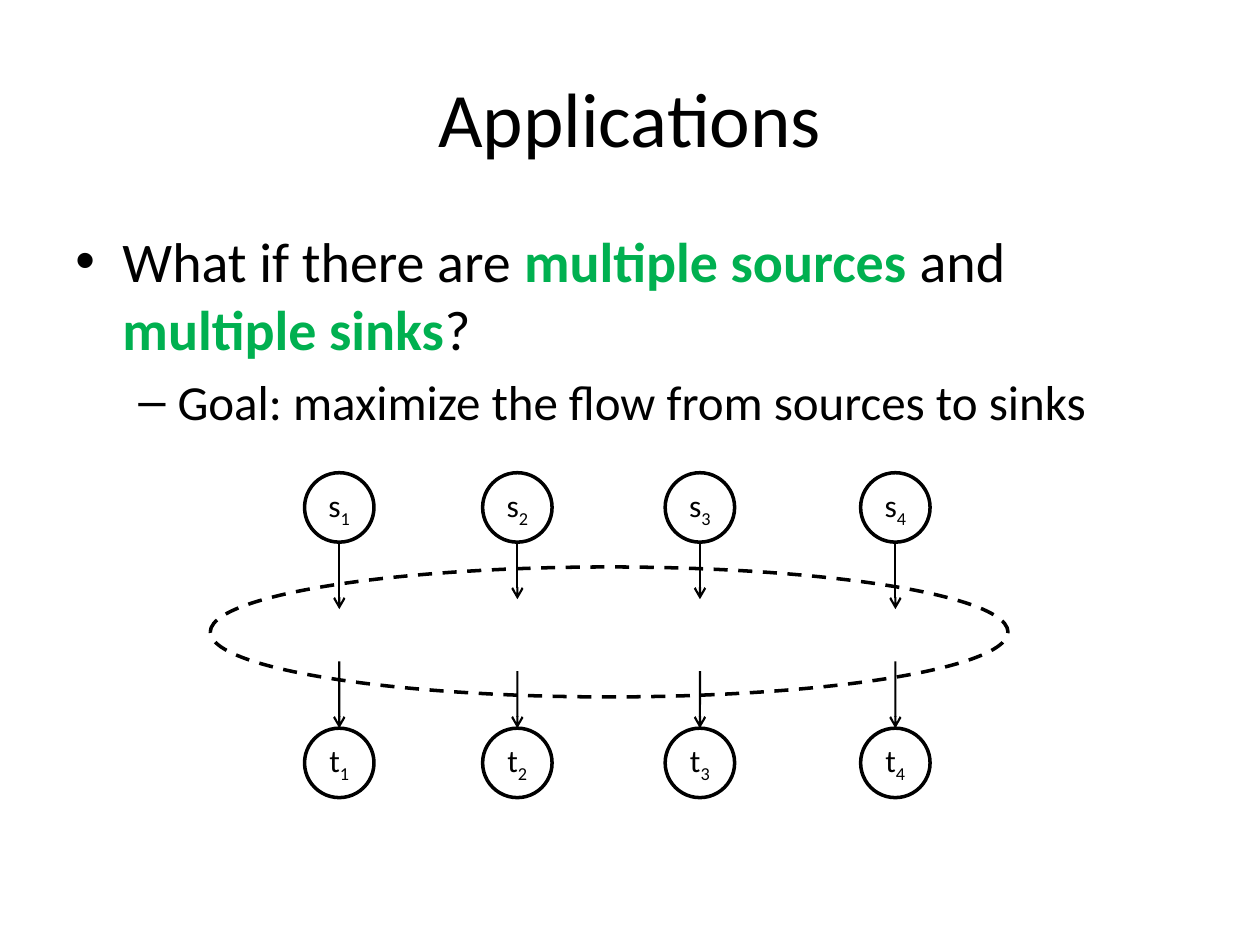
from lxml.etree import SubElement
from pptx import Presentation
from pptx.dml.color import RGBColor
from pptx.enum.dml import MSO_LINE_DASH_STYLE as DASH
from pptx.enum.shapes import MSO_CONNECTOR as CONNECTOR, MSO_SHAPE as SHAPE
from pptx.enum.text import MSO_ANCHOR as ANCHOR, PP_ALIGN as ALIGN
from pptx.oxml.ns import qn
from pptx.util import Cm, Pt

COLORS = {"ink": "000000", "accent": "00B050", "paper": "FFFFFF"}
FONT = "Calibri"

NODE_SIZE = 1.4
SOURCE_TOP, SINK_TOP = 9.53, 14.68
# Column centre and arrow length: the outer arrows reach further into the oval
COLUMNS = [(6.84, 1.35), (10.43, 1.15), (14.11, 1.15), (18.05, 1.35)]


def rgb(name):
    return RGBColor.from_string(COLORS[name])


def write(paragraph, text, size=18, color="ink", bold=False, baseline=None):
    """Append one formatted run to the paragraph."""
    run = paragraph.add_run()
    run.text = text
    font = run.font
    font.name, font.size, font.bold = FONT, Pt(size), bold
    font.color.rgb = rgb(color)
    if baseline is not None:
        run._r.get_or_add_rPr().set("baseline", str(baseline * 1000))


def set_bullet(paragraph, mark, left, hanging, space_before):
    paragraph.space_before = Pt(space_before)
    properties = paragraph._p.get_or_add_pPr()
    properties.set("marL", str(Cm(left)))
    properties.set("indent", str(-Cm(hanging)))
    SubElement(properties, qn("a:buFont")).set("typeface", "Arial")
    SubElement(properties, qn("a:buChar")).set("char", mark)


def add_title(slide, text):
    title = slide.shapes.title
    title.left, title.top = Cm(1.27), Cm(0.76)
    title.width, title.height = Cm(22.86), Cm(3.18)
    title.text_frame.vertical_anchor = ANCHOR.MIDDLE
    paragraph = title.text_frame.paragraphs[0]
    paragraph.alignment = ALIGN.CENTER
    write(paragraph, text, size=44)


def add_body(slide):
    body = slide.shapes.add_textbox(Cm(1.27), Cm(4.45), Cm(22.86), Cm(12.57))
    frame = body.text_frame
    frame.word_wrap = True

    question = frame.paragraphs[0]
    set_bullet(question, "•", left=0.95, hanging=0.95, space_before=6.4)
    write(question, "What if there are ", size=32)
    write(question, "multiple sources ", size=32, color="accent", bold=True)
    write(question, "and ", size=32)
    write(question, "multiple sinks", size=32, color="accent", bold=True)
    write(question, "?", size=32)

    goal = frame.add_paragraph()
    goal.level = 1
    set_bullet(goal, "–", left=2.06, hanging=0.79, space_before=5.6)
    write(goal, "Goal: maximize the flow from sources to sinks", size=28)


def add_ellipse(slide, left, top, width, height):
    ellipse = slide.shapes.add_shape(
        SHAPE.OVAL, Cm(left), Cm(top), Cm(width), Cm(height))
    ellipse.shadow.inherit = False
    ellipse.fill.background()
    ellipse.line.color.rgb = rgb("ink")
    ellipse.line.width = Pt(2)
    return ellipse


def add_node(slide, center, top, letter, number):
    node = add_ellipse(slide, center - NODE_SIZE / 2, top, NODE_SIZE, NODE_SIZE)
    frame = node.text_frame
    frame.margin_left = frame.margin_right = 0
    frame.margin_top = frame.margin_bottom = 0
    frame.vertical_anchor = ANCHOR.MIDDLE
    label = frame.paragraphs[0]
    label.alignment = ALIGN.CENTER
    write(label, letter)
    write(label, str(number), baseline=-25)
    return node


def add_down_arrow(slide, x, top, length):
    arrow = slide.shapes.add_connector(
        CONNECTOR.STRAIGHT, Cm(x), Cm(top), Cm(x), Cm(top + length))
    arrow.line.color.rgb = rgb("ink")
    arrow.line.width = Pt(1.25)
    SubElement(arrow.line._get_or_add_ln(), qn("a:tailEnd")).set("type", "arrow")
    SubElement(arrow._element.spPr, qn("a:effectLst"))
    return arrow


def add_network(slide):
    network = add_ellipse(slide, 4.24, 11.43, 16.08, 2.62)
    network.line.dash_style = DASH.DASH
    for number, (center, length) in enumerate(COLUMNS, start=1):
        add_node(slide, center, SOURCE_TOP, "s", number)
        sink = add_node(slide, center, SINK_TOP, "t", number)
        add_down_arrow(slide, center, SOURCE_TOP + NODE_SIZE, length)
        inflow = add_down_arrow(slide, center, SINK_TOP - length, length)
        inflow.end_connect(sink, 0)


def main():
    deck = Presentation()
    deck.slide_width, deck.slide_height = Cm(25.4), Cm(19.05)
    slide = deck.slides.add_slide(deck.slide_layouts[5])
    slide.background.fill.solid()
    slide.background.fill.fore_color.rgb = rgb("paper")
    add_title(slide, "Applications")
    add_body(slide)
    add_network(slide)
    deck.save("out.pptx")


if __name__ == "__main__":
    main()
